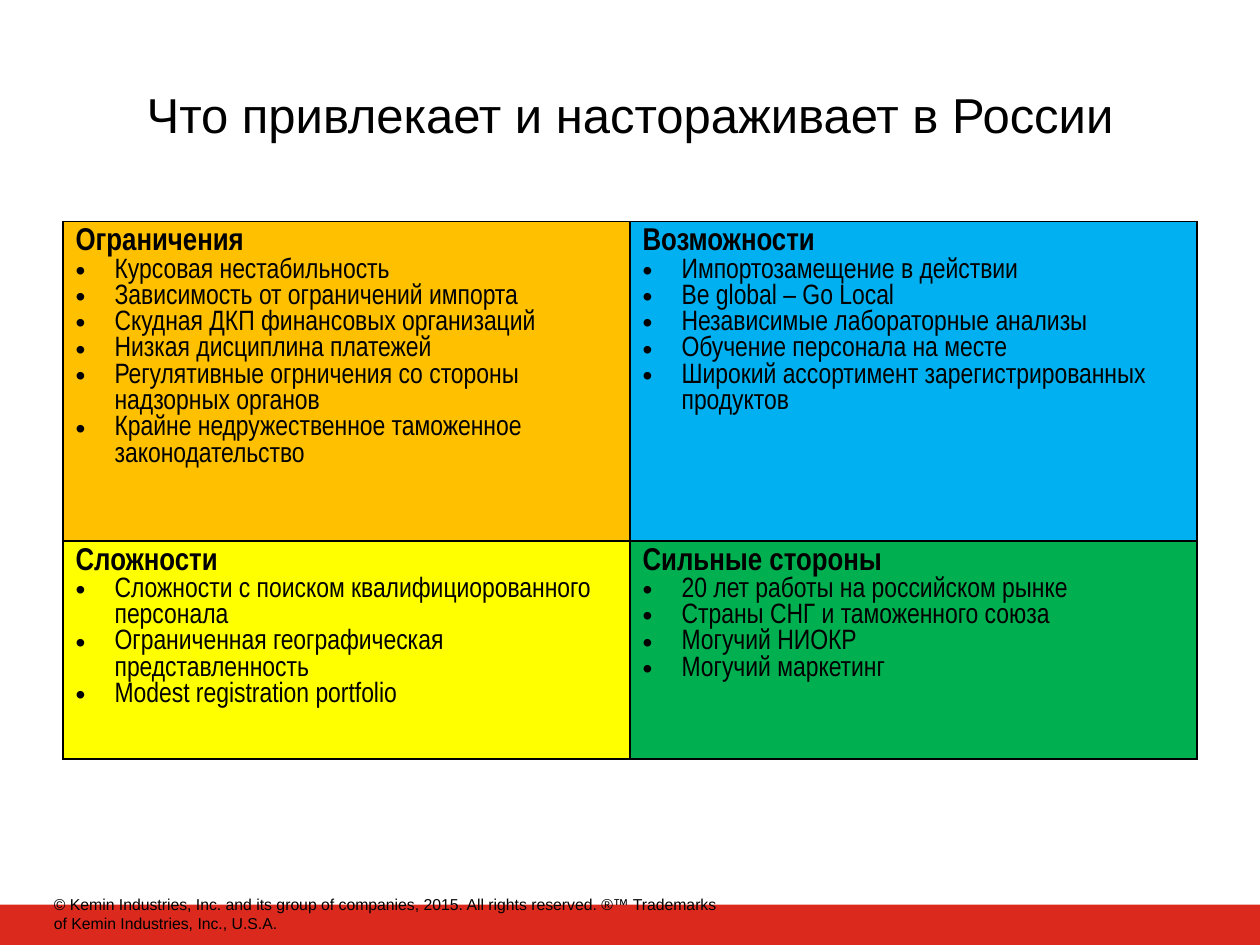
import pptx
import pptx.dml.color
import pptx.enum.shapes
import pptx.enum.text
import pptx.oxml
import pptx.oxml.ns
import pptx.util
from pptx.util import Inches

COLORS = {
    "text": "000000",
    "bar": "DC291E",
    "limits": "FFC000",
    "chances": "00B0F0",
    "difficulties": "FFFF00",
    "strengths": "00B050",
}

QUADRANTS = [
    [
        ("limits", "Ограничения", [
            "Курсовая нестабильность",
            "Зависимость от ограничений импорта",
            "Скудная ДКП финансовых организаций",
            "Низкая дисциплина платежей",
            "Регулятивные огрничения со стороны надзорных органов",
            "Крайне недружественное таможенное законодательство",
        ]),
        ("chances", "Возможности", [
            "Импортозамещение в действии",
            "Be global – Go Local",
            "Независимые лабораторные анализы",
            "Обучение персонала на месте",
            "Широкий ассортимент зарегистрированных продуктов",
        ]),
    ],
    [
        ("difficulties", "Сложности", [
            "Сложности с поиском квалифициорованного персонала",
            "Ограниченная географическая представленность",
            "Modest registration portfolio",
        ]),
        ("strengths", "Сильные стороны", [
            "20 лет работы на российском рынке",
            "Страны СНГ и таможенного союза",
            "Могучий НИОКР",
            "Могучий маркетинг",
        ]),
    ],
]


def color(name):
    return pptx.dml.color.RGBColor.from_string(COLORS[name])


def add_xml(parent, tag, attributes, content=""):
    namespace = pptx.oxml.ns.nsdecls("a")
    parent.append(pptx.oxml.parse_xml(
        f"<a:{tag} {namespace} {attributes}>{content}</a:{tag}>"))


def write(frame, text, size, font="Arial", bold=False, align=None,
          spacing=None, bullet=False, first=True):
    para = frame.paragraphs[0] if first else frame.add_paragraph()
    para.alignment = align
    if spacing:
        para.line_spacing = spacing
    if bullet:
        properties = para._p.get_or_add_pPr()
        indent = Inches(0.31)
        properties.set("marL", str(indent))
        properties.set("indent", str(-indent))
        add_xml(properties, "buFont", 'typeface="Arial"')
        add_xml(properties, "buChar", 'char="•"')
    span = para.add_run()
    span.text = text
    span.font.name = font
    span.font.size = pptx.util.Pt(size)
    span.font.bold = bold
    span.font.color.rgb = color("text")


def place_title(page, left, top, width, height):
    title = page.shapes.title
    title.left, title.top, title.width, title.height = left, top, width, height
    frame = title.text_frame
    frame.margin_left = frame.margin_right = 0
    frame.margin_top = frame.margin_bottom = 0
    frame.vertical_anchor = pptx.enum.text.MSO_ANCHOR.MIDDLE
    write(frame, "Что привлекает и настораживает в России", 28,
          align=pptx.enum.text.PP_ALIGN.CENTER, spacing=0.96)


def place_footer(page, left, top, width, height):
    bar = page.shapes.add_shape(
        pptx.enum.shapes.MSO_SHAPE.RECTANGLE, left, top, width, height)
    bar.shadow.inherit = False
    bar.fill.solid()
    bar.fill.fore_color.rgb = color("bar")
    bar.line.fill.background()
    box = page.shapes.add_textbox(
        left + Inches(0.33), top - Inches(0.13), Inches(5.5), Inches(0.4))
    box.text_frame.word_wrap = True
    write(box.text_frame,
          "© Kemin Industries, Inc. and its group of companies, 2015. "
          "All rights reserved. ®™ Trademarks of Kemin Industries, Inc., U.S.A.", 9)


def fill_quadrant(cell, fill, heading, points):
    for side in ("lnL", "lnR", "lnT", "lnB"):
        add_xml(cell._tc.get_or_add_tcPr(), side, f'w="{pptx.util.Pt(1)}"',
                f'<a:solidFill><a:srgbClr val="{COLORS["text"]}"/></a:solidFill>')
    cell.fill.solid()
    cell.fill.fore_color.rgb = color(fill)
    write(cell.text_frame, heading, 18, font="Arial Narrow", bold=True)
    for point in points:
        write(cell.text_frame, point, 16, font="Arial Narrow", bullet=True, first=False)


def place_matrix(page, left, top, width, heights):
    table = page.shapes.add_table(
        len(QUADRANTS), len(QUADRANTS[0]), left, top, width, sum(heights)).table
    table.first_row = False
    table.horz_banding = False
    for row, height, quadrants in zip(table.rows, heights, QUADRANTS):
        row.height = height
        for cell, quadrant in zip(row.cells, quadrants):
            fill_quadrant(cell, *quadrant)


def main():
    deck = pptx.Presentation()
    deck.slide_width, deck.slide_height = Inches(10), Inches(7.5)
    page = deck.slides.add_slide(deck.slide_layouts[5])
    place_footer(page, 0, Inches(7.18), deck.slide_width, Inches(0.32))
    place_title(page, Inches(0.5), Inches(0.3), Inches(9), Inches(1.25))
    place_matrix(page, Inches(0.5), Inches(1.76), Inches(9),
                 [Inches(2.21), Inches(1.59)])
    deck.save("out.pptx")


if __name__ == "__main__":
    main()
